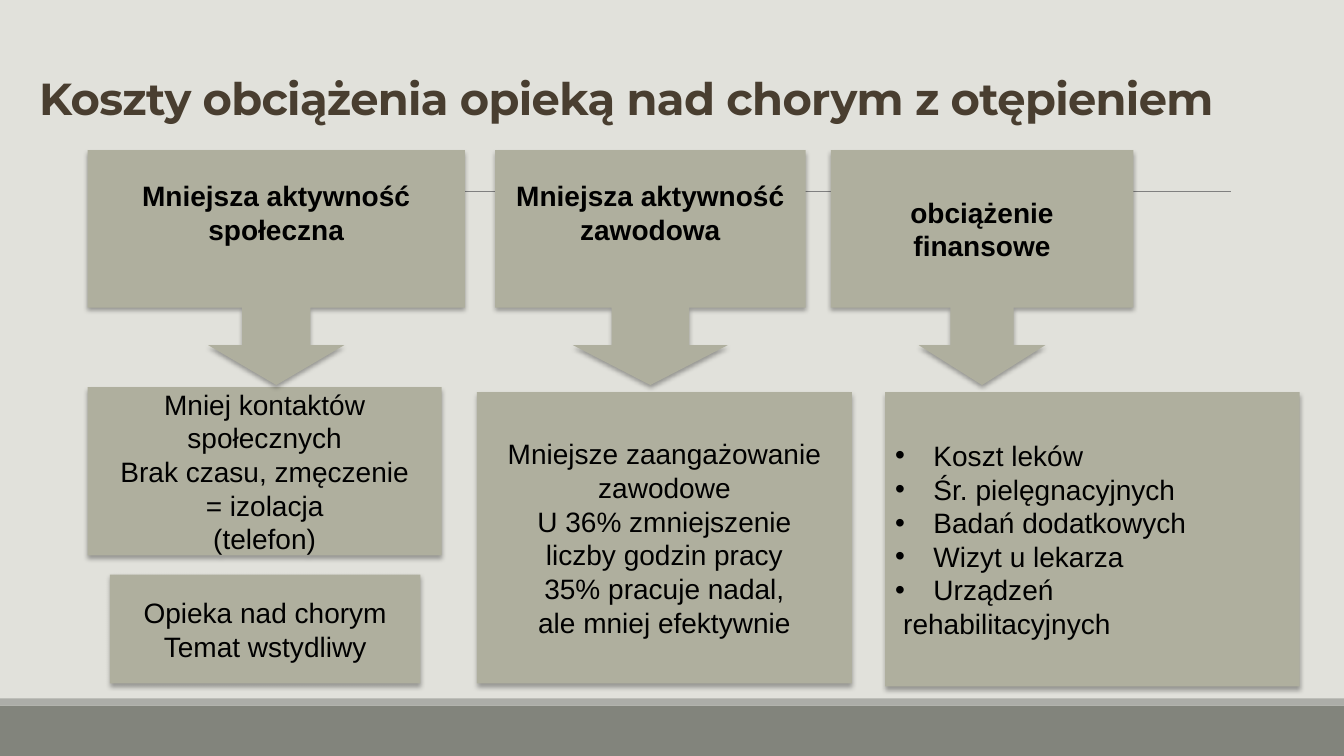
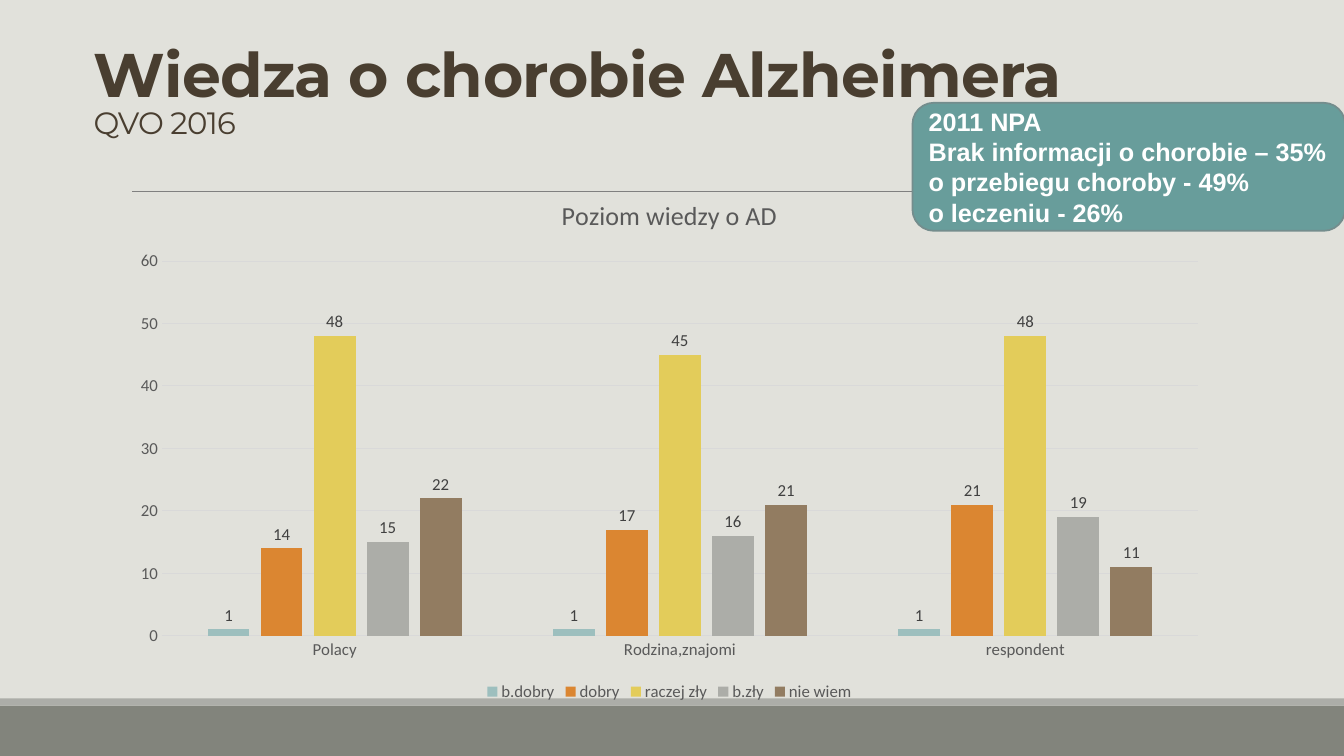
from lxml.etree import SubElement as sub
from pptx import Presentation
from pptx.chart.data import CategoryChartData as Data
from pptx.dml.color import RGBColor as RGB
from pptx.enum.chart import XL_CHART_TYPE as Chart, XL_LABEL_POSITION as Place
from pptx.enum.chart import XL_LEGEND_POSITION as Side, XL_TICK_MARK as Tick
from pptx.enum.shapes import MSO_CONNECTOR as Link, MSO_SHAPE as Kind
from pptx.enum.text import MSO_ANCHOR as Anchor, PP_ALIGN as Align
from pptx.oxml.ns import qn
from pptx.util import Inches, Pt

HUES = {
    "back": "E1E1DB", "band": "82847C", "strip": "ACADA8", "rule": "808080",
    "title": "493E30", "box": "AFAF9E", "black": "000000", "white": "FFFFFF",
    "teal": "689D9B", "edge": "748D8D", "axis": "595959", "grid": "D9D9D9",
    "label": "404040",
}
HEAD = {"name": "Montserrat", "bold": True}
BODY = {"name": "Arial", "size": Pt(20), "bold": False}
BOLD = {"name": "Arial", "size": Pt(20), "bold": True}
NOTE = {"name": "Arial", "size": Pt(18), "bold": True}
TICK = {"name": "Calibri", "size": Pt(12), "bold": False}


def style(font, hue, form):
    for key, value in form.items():
        setattr(font, key, value)
    font.color.rgb = RGB.from_string(HUES[hue])


def box(slide, kind, at, fill, lines=(), form=BODY, hue="black", align=Align.CENTER):
    shape = slide.shapes.add_shape(kind, *map(Inches, at))
    shape.shadow.inherit = False
    shape.fill.solid()
    shape.fill.fore_color.rgb = RGB.from_string(HUES[fill])
    shape.line.fill.background()
    frame = shape.text_frame
    frame.word_wrap = True
    frame.vertical_anchor = Anchor.MIDDLE
    for i, line in enumerate(lines):
        para = frame.paragraphs[0] if i == 0 else frame.add_paragraph()
        para.alignment = align
        run = para.add_run()
        run.text = line
        style(run.font, hue, form)
    return shape


deck = Presentation()
deck.slide_width, deck.slide_height = Inches(13.33), Inches(7.5)
ground = deck.slide_master.background.fill
ground.solid()
ground.fore_color.rgb = RGB.from_string(HUES["back"])

# Shared parts: bands, rule and title
heads = [
    ((0.29, 0.14, 13.02, 1.15), [("Koszty obciążenia opieką nad chorym z otępieniem", 32, True)]),
    ((0.83, 0.2, 10.26, 1.25), [("Wiedza o chorobie Alzheimera", 44, True), ("QVO 2016", 22, False)]),
]
for at, parts in heads:
    slide = deck.slides.add_slide(deck.slide_layouts[6])
    box(slide, Kind.RECTANGLE, (0, 7, 13.33, 0.5), "band")
    box(slide, Kind.RECTANGLE, (0, 6.93, 13.33, 0.07), "strip")
    rule = slide.shapes.add_connector(
        Link.STRAIGHT, Inches(1.31), Inches(1.9), Inches(12.21), Inches(1.9))
    rule.line.color.rgb = RGB.from_string(HUES["rule"])
    rule.line.width = Pt(0.5)
    sub(rule.element.spPr, qn("a:effectLst"))
    frame = slide.shapes.add_textbox(*map(Inches, at)).text_frame
    frame.word_wrap = True
    frame.vertical_anchor = Anchor.BOTTOM
    para = frame.paragraphs[0]
    para.line_spacing = 0.85
    for i, (text, size, bold) in enumerate(parts):
        if i:
            para.add_line_break()
        run = para.add_run()
        run.text = text
        style(run.font, "title", HEAD | {"size": Pt(size), "bold": bold})
        run.font._element.set("spc", "-50")

costs, facts = deck.slides

# Cost boxes and the arrows that lead to them
cards = [
    ((1.09, 5.7, 3.08, 1.08), ["Opieka nad chorym", "Temat wstydliwy"]),
    ((0.87, 3.84, 3.51, 1.67), ["Mniej kontaktów", "społecznych", "Brak czasu, zmęczenie",
                                "= izolacja", "(telefon)"]),
    ((4.73, 3.89, 3.72, 2.89), ["Mniejsze zaangażowanie", "zawodowe", "U 36% zmniejszenie",
                                "liczby godzin pracy", "35% pracuje nadal,",
                                "ale mniej efektywnie"]),
]
shapes = [box(costs, Kind.RECTANGLE, at, "box", lines) for at, lines in cards]

goods = box(costs, Kind.RECTANGLE, (8.78, 3.89, 4.11, 2.92), "box",
            ["Koszt leków", "Śr. pielęgnacyjnych", "Badań dodatkowych",
             "Wizyt u lekarza", "Urządzeń", "rehabilitacyjnych"], align=Align.LEFT)
shapes.append(goods)
*items, last = goods.text_frame.paragraphs
for para in items:
    props = para._p.get_or_add_pPr()
    props.set("marL", str(Inches(0.38)))
    props.set("indent", str(-Inches(0.38)))
    sub(props, qn("a:buFont"), typeface="Arial")
    sub(props, qn("a:buChar"), char="•")
last._p.get_or_add_pPr().set("marL", str(Inches(0.08)))

# Callouts: left, width, arrow size, bottom inset, lines
calls = [
    (0.87, 3.74, 0.29, 0.38, ["Mniejsza aktywność", "społeczna"]),
    (4.91, 3.08, 0.33, 0.38, ["Mniejsza aktywność", "zawodowa"]),
    (8.24, 3, 0.27, 0.05, ["obciążenie", "finansowe"]),
]
for left, width, arrow, inset, lines in calls:
    call = box(costs, Kind.DOWN_ARROW_CALLOUT, (left, 1.49, width, 2.33), "box", lines, BOLD)
    for i, value in enumerate((arrow, arrow, 0.17, 0.67)):
        call.adjustments[i] = value
    call.text_frame.margin_bottom = Inches(inset)
    shapes.append(call)

# Soft shadow below each cost shape
for shape in shapes:
    glow = shape.element.spPr.find(qn("a:effectLst"))
    shade = sub(glow, qn("a:outerShdw"), blurRad=str(Pt(3.5)), dist=str(Pt(2.2)),
                dir="5400000", rotWithShape="0")
    tint = sub(shade, qn("a:srgbClr"), val=HUES["black"])
    sub(tint, qn("a:alpha"), val="32000")

# Chart of knowledge levels
series = [
    ("b.dobry", (1, 1, 1), "9DBFBE"),
    ("dobry", (14, 17, 21), "DB8631"),
    ("raczej zły", (48, 45, 48), "E3CC5A"),
    ("b.zły", (15, 16, 19), "ACADA8"),
    ("nie wiem", (22, 21, 11), "927C61"),
]
data = Data()
data.categories = ["Polacy", "Rodzina,znajomi", "respondent"]
for name, values, hue in series:
    data.add_series(name, values)
chart = facts.shapes.add_chart(
    Chart.COLUMN_CLUSTERED, *map(Inches, (1.18, 1.75, 10.92, 5.25)), data).chart
style(chart.font, "axis", TICK)

chart.has_title = True
para = chart.chart_title.text_frame.paragraphs[0]
run = para.add_run()
run.text = "Poziom wiedzy o AD"
style(run.font, "axis", TICK | {"size": Pt(18.6)})
chart.chart_title.include_in_layout = False

chart.has_legend = True
chart.legend.position = Side.BOTTOM
chart.legend.include_in_layout = False
style(chart.legend.font, "axis", TICK)

plot = chart.plots[0]
plot.gap_width, plot.overlap = 219, -27
plot.vary_by_categories = False
for group, (name, values, hue) in zip(plot.series, series):
    group.format.fill.solid()
    group.format.fill.fore_color.rgb = RGB.from_string(hue)
    labels = group.data_labels
    labels.show_value = True
    labels.position = Place.OUTSIDE_END
    style(labels.font, "label", TICK)

cats, vals = chart.category_axis, chart.value_axis
for axis in (cats, vals):
    axis.major_tick_mark = axis.minor_tick_mark = Tick.NONE
    style(axis.tick_labels.font, "axis", TICK)
vals.minimum_scale, vals.maximum_scale, vals.major_unit = 0, 60, 10
vals.format.line.fill.background()
for line in (cats.format.line, vals.major_gridlines.format.line):
    line.color.rgb = RGB.from_string(HUES["grid"])
    line.width = Pt(0.75)

# Earlier survey note
note = box(facts, Kind.ROUNDED_RECTANGLE, (9.05, 1.02, 4.29, 1.27), "teal",
           ["2011 NPA", "Brak informacji o chorobie – 35%",
            "o przebiegu choroby - 49%", "o leczeniu - 26%"], NOTE, "white", Align.LEFT)
note.line.color.rgb = RGB.from_string(HUES["edge"])
note.line.width = Pt(1.25)

deck.save("out.pptx")
